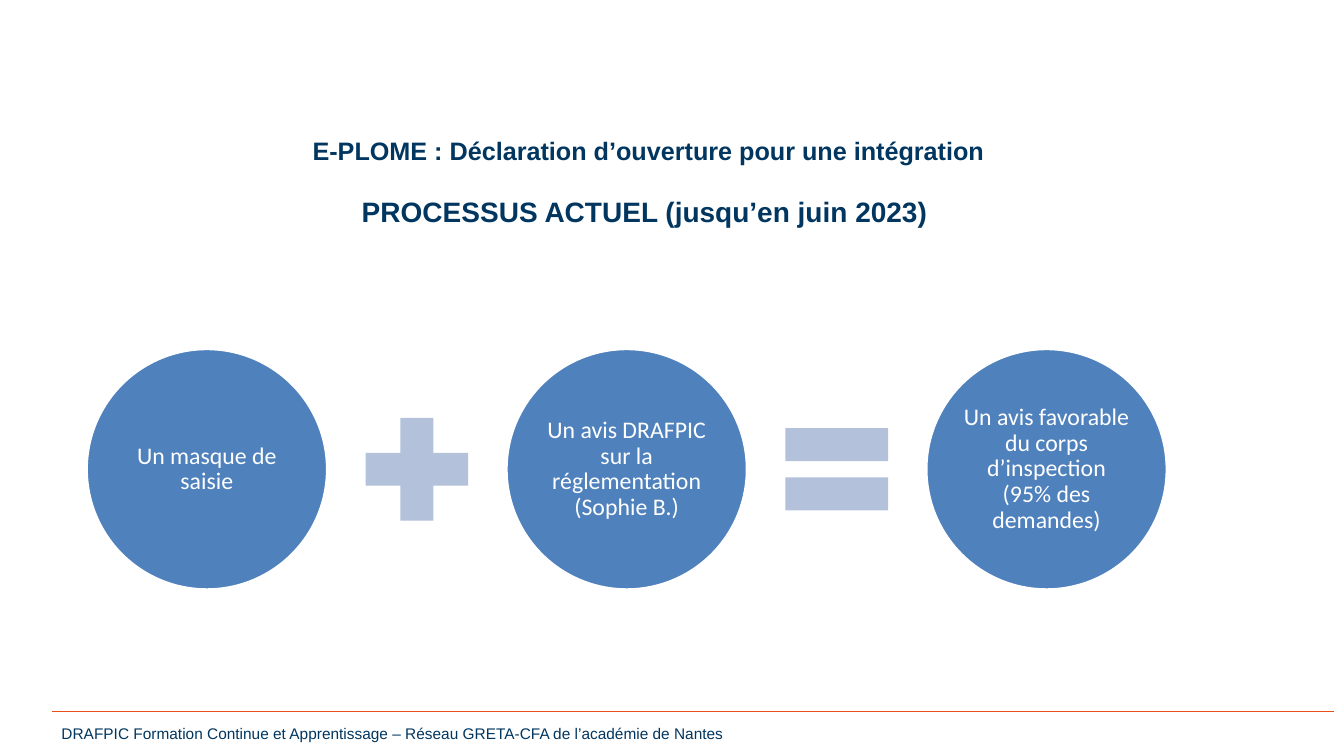
from lxml import etree
from pptx import Presentation
from pptx import util as u
from pptx.dml import color
from pptx.enum import shapes, text
from pptx.oxml import ns

HUES = {"navy": "00365F", "rust": "E94E1B", "blue": "4F81BD",
        "pale": "B3C1DB", "white": "FFFFFF"}
STEPS = ["Un masque de saisie",
         "Un avis DRAFPIC sur la réglementation (Sophie B.)",
         "Un avis favorable du corps d’inspection (95% des demandes)"]
SIGNS = [shapes.MSO_SHAPE.MATH_PLUS, shapes.MSO_SHAPE.MATH_EQUAL]


def hue(name):
    """Return the named colour."""
    return color.RGBColor.from_string(HUES[name])


def style(para, size, face, tint, bold=False):
    """Format every run of a paragraph."""
    for run in para.runs:
        run.font.size = u.Pt(size)
        run.font.name = face
        run.font.bold = bold
        run.font.color.rgb = hue(tint)


def inset(frame, side, top):
    """Set the margins of a wrapped text frame in centimetres."""
    frame.word_wrap = True
    frame.margin_left = frame.margin_right = u.Cm(side)
    frame.margin_top = frame.margin_bottom = u.Cm(top)


def shape(slide, kind, box, tint):
    """Add a flat filled shape without an outline."""
    item = slide.shapes.add_shape(kind, *map(u.Cm, box))
    item.shadow.inherit = False
    item.fill.solid()
    item.fill.fore_color.rgb = hue(tint)
    item.line.fill.background()
    return item


def title(slide, box):
    """Place the two centred heading lines."""
    frame = slide.shapes.add_textbox(*map(u.Cm, box)).text_frame
    inset(frame, 0.25, 0.13)
    frame.text = ("E-PLOME : Déclaration d’ouverture pour une intégration\n"
                  "PROCESSUS ACTUEL (jusqu’en juin 2023) ")
    for para, size in zip(frame.paragraphs, (18, 20)):
        para.alignment = text.PP_ALIGN.CENTER
        style(para, size, "Arial", "navy", True)
    frame.paragraphs[1].space_before = u.Pt(21)


def circle(slide, box, words):
    """Place one step as a labelled circle."""
    disc = shape(slide, shapes.MSO_SHAPE.OVAL, box, "blue")
    disc.line.color.rgb = hue("white")
    disc.line.width = u.Pt(2)
    frame = disc.text_frame
    inset(frame, 0.05, 0.05)
    frame.vertical_anchor = text.MSO_ANCHOR.MIDDLE
    frame.text = words
    para = frame.paragraphs[0]
    para.alignment = text.PP_ALIGN.CENTER
    para.line_spacing = 0.9
    style(para, 17, "Calibri", "white")


def process(slide, box):
    """Spread the circles over the box with a sign in each gap."""
    left, top, width, size = box
    pitch = (width - size) / (len(STEPS) - 1)
    side = 0.58 * size
    for i, words in enumerate(STEPS):
        circle(slide, (left + i * pitch, top, size, size), words)
    for i, kind in enumerate(SIGNS):
        x = left + (i + 0.5) * pitch + (size - side) / 2
        shape(slide, kind, (x, top + (size - side) / 2, side, side), "pale")


def footer(slide, box):
    """Place the rule and the line of text below it."""
    left, top, width, height = box
    rule = slide.shapes.add_connector(
        shapes.MSO_CONNECTOR.STRAIGHT,
        *map(u.Cm, (left, top, left + width, top)))
    rule.line.color.rgb = hue("rust")
    rule.line.width = u.Pt(0.25)
    etree.SubElement(rule._element.spPr, ns.qn("a:effectLst"))
    label = slide.shapes.add_textbox(
        *map(u.Cm, (left + 0.23, top + 0.08, 19.43, height - 0.08)))
    frame = label.text_frame
    inset(frame, 0, 0)
    frame.vertical_anchor = text.MSO_ANCHOR.BOTTOM
    frame.text = ("DRAFPIC Formation Continue et Apprentissage – "
                  "Réseau GRETA-CFA de l’académie de Nantes")
    style(frame.paragraphs[0], 11, "Arial", "navy")


def main():
    """Build and save the slide."""
    deck = Presentation()
    deck.slide_width, deck.slide_height = u.Cm(33.87), u.Cm(19.05)
    slide = deck.slides.add_slide(deck.slide_layouts[6])
    footer(slide, (1.32, 17.91, 32.31, 0.81))
    title(slide, (1.88, 3.28, 28.93, 2.64))
    process(slide, (2.18, 8.79, 27.23, 6.07))
    deck.save("out.pptx")


if __name__ == "__main__":
    main()
